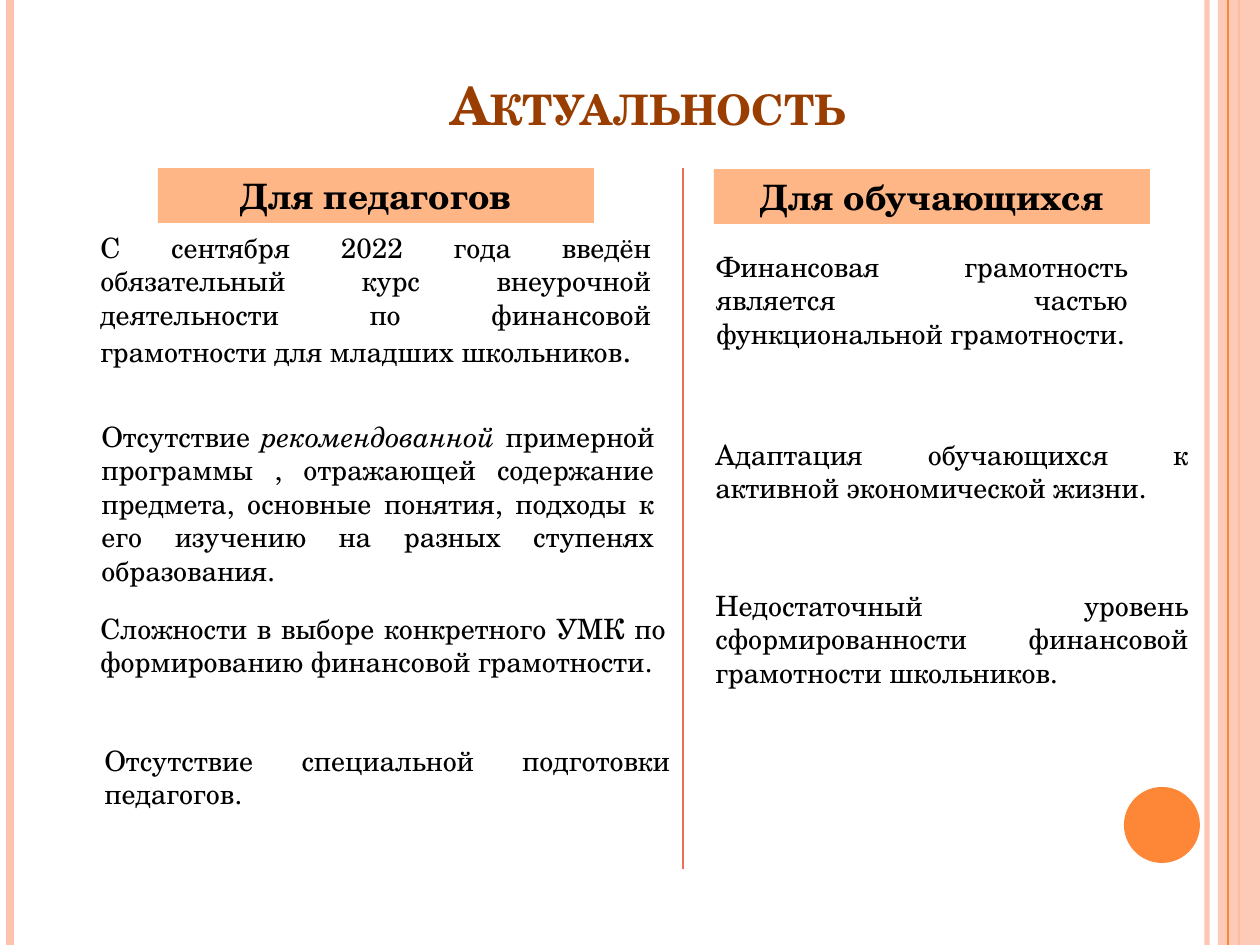
from lxml.etree import SubElement
from pptx import Presentation
from pptx.dml.color import RGBColor
from pptx.enum.shapes import MSO_CONNECTOR, MSO_SHAPE
from pptx.enum.text import MSO_ANCHOR, PP_ALIGN
from pptx.oxml.ns import qn
from pptx.util import Emu, Pt

PX = 914400 / 126
W, H = 1260, 945
FONT = "TeX Gyre Schola"
COLORS = {
    "pink": "FEC3AE",
    "orange": "FE8637",
    "peach": "FEB687",
    "coral": "EB6E5A",
    "brown": "9A3D01",
    "black": "000000",
}
BODY = {"size": Pt(16)}
HEADING = {"size": Pt(20), "bold": True}
TITLE = {"size": Pt(30), "bold": True}

EDGE_LINES = [
    (1207, "pink", 3, 93),
    (10, "pink", 4.5, 100),
    (1239, "orange", 1.5, 100),
]
HEADINGS = [
    (158, 168, "Для педагогов"),
    (714, 169, "Для обучающихся"),
]
NOTES = [
    (88, 224, 576, 186, [
        ("С сентября 2022 года введён обязательный курс внеурочной деятельности "
         "по финансовой грамотности для младших школьников", {}),
        (".", {"size": Pt(18)}),
    ]),
    (89, 413, 578, 183, [
        ("Отсутствие ", {}),
        ("рекомендованной", {"italic": True}),
        (" примерной программы , отражающей содержание предмета, основные понятия, "
         "подходы к его изучению на разных ступенях образования.", {}),
    ]),
    (88, 605, 591, 115, [
        ("Сложности в выборе конкретного УМК по формированию финансовой грамотности.", {}),
    ]),
    (92, 737, 591, 81, [("Отсутствие специальной подготовки педагогов.", {})]),
    (704, 243, 436, 149, [
        ("Финансовая грамотность является частью функциональной грамотности.", {}),
    ]),
    (703, 431, 498, 115, [
        ("Адаптация обучающихся к активной экономической жизни.", {}),
    ]),
    (703, 582, 498, 115, [
        ("Недостаточный уровень сформированности финансовой грамотности школьников.", {}),
    ]),
]


def px(*values):
    """Turn pixel lengths into EMU."""
    return [Emu(round(v * PX)) for v in values]


def rgb(name):
    """Look up a named colour."""
    return RGBColor.from_string(COLORS[name])


def set_alpha(element, percent):
    """Make the colours of an element partly transparent."""
    if percent < 100:
        for clr in element.iter(qn("a:srgbClr")):
            SubElement(clr, qn("a:alpha")).set("val", str(percent * 1000))


def add_rule(slide, x, top, bottom, color, width, alpha=100):
    """Draw a vertical line."""
    line = slide.shapes.add_connector(MSO_CONNECTOR.STRAIGHT, *px(x, top, x, bottom))
    line.line.color.rgb = rgb(color)
    line.line.width = Pt(width)
    set_alpha(line._element.spPr, alpha)
    SubElement(line._element.spPr, qn("a:effectLst"))


def add_block(slide, kind, box, color, alpha=100):
    """Draw a filled shape without outline."""
    sp = slide.shapes.add_shape(kind, *px(*box))
    sp.shadow.inherit = False
    sp.fill.solid()
    sp.fill.fore_color.rgb = rgb(color)
    sp.line.fill.background()
    set_alpha(sp._element.spPr, alpha)
    return sp


def write(sp, runs, base, align, color="black", anchor=MSO_ANCHOR.TOP):
    """Fill a shape with one paragraph of formatted runs."""
    tf = sp.text_frame
    tf.word_wrap = True
    tf.vertical_anchor = anchor
    p = tf.paragraphs[0]
    p.alignment = align
    for text, extra in runs:
        r = p.add_run()
        r.text = text
        for name, value in {"name": FONT, **base, **extra}.items():
            setattr(r.font, name, value)
        r.font.color.rgb = rgb(color)
    return p


def add_title(slide, text):
    """Add the small-caps title."""
    sp = slide.shapes.add_textbox(*px(438, 36, 531, 106))
    p = write(sp, [(text, {})], TITLE, PP_ALIGN.LEFT, "brown", MSO_ANCHOR.BOTTOM)
    p.runs[0]._r.get_or_add_rPr().set("cap", "small")


def main():
    """Build the slide."""
    prs = Presentation()
    prs.slide_width, prs.slide_height = px(W, H)
    slide = prs.slides.add_slide(prs.slide_layouts[6])

    for x, color, width, alpha in EDGE_LINES:
        add_rule(slide, x, 0, H, color, width, alpha)
    add_block(slide, MSO_SHAPE.RECTANGLE, (1218, 0, 42, H), "pink", 87)
    add_rule(slide, 1228, 0, H, "orange", 0.75)
    add_block(slide, MSO_SHAPE.OVAL, (1124, 787, 76, 76), "orange")

    add_title(slide, "Актуальность")
    for *box, runs in NOTES:
        write(slide.shapes.add_textbox(*px(*box)), runs, BODY, PP_ALIGN.JUSTIFY)
    for x, y, text in HEADINGS:
        sp = add_block(slide, MSO_SHAPE.RECTANGLE, (x, y, 436, 55), "peach")
        write(sp, [(text, {})], HEADING, PP_ALIGN.CENTER)
    add_rule(slide, 683, 168, 869, "coral", 1)

    prs.save("out.pptx")


if __name__ == "__main__":
    main()
